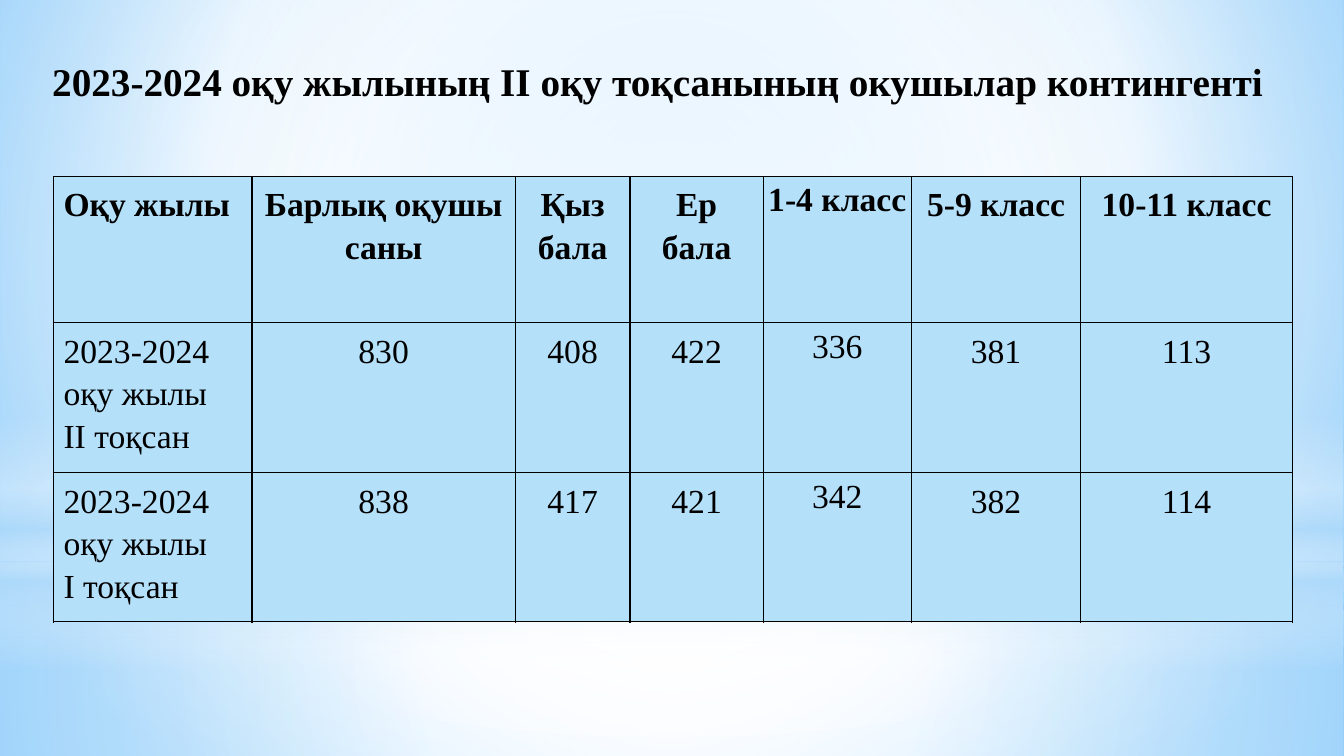
"""Builds the slide with the pupil numbers of two school terms."""
from lxml import etree
from pptx import Presentation, util as u
from pptx.dml.color import RGBColor
from pptx.enum import shapes, text
from pptx.oxml.ns import qn

BLACK = RGBColor(0, 0, 0)
CELL_BLUE = RGBColor(0xB4, 0xE0, 0xFA)
FONT = "Times New Roman"
WIDTH, HEIGHT = 13.33, 7.5


def set_gradient(holder, stops, focus=None):
    """Fill with (position, colour, opacity) stops, around focus or downwards."""
    gradient = next(holder.iter(qn("a:gradFill")))
    for child in list(gradient):
        gradient.remove(child)
    stop_list = etree.SubElement(gradient, qn("a:gsLst"))
    for position, colour, opacity in stops:
        stop = etree.SubElement(stop_list, qn("a:gs"), pos=str(position * 1000))
        rgb = etree.SubElement(stop, qn("a:srgbClr"), val=colour)
        if opacity < 100:
            etree.SubElement(rgb, qn("a:alpha"), val=str(opacity * 1000))
    if focus:
        circle = etree.SubElement(gradient, qn("a:path"), path="circle")
        edges = {side: str(share * 1000) for side, share in zip("ltrb", focus)}
        etree.SubElement(circle, qn("a:fillToRect"), edges)
    else:
        etree.SubElement(gradient, qn("a:lin"), ang="5400000", scaled="0")


def set_borders(cell):
    """Draw a thin black line on all four sides of a cell."""
    properties = cell._tc.get_or_add_tcPr()
    for place, side in enumerate(("a:lnL", "a:lnR", "a:lnT", "a:lnB")):
        line = etree.Element(qn(side), w="12700")
        fill = etree.SubElement(line, qn("a:solidFill"))
        etree.SubElement(fill, qn("a:srgbClr"), val=str(BLACK))
        properties.insert(place, line)


deck = Presentation()
deck.slide_width, deck.slide_height = u.Inches(WIDTH), u.Inches(HEIGHT)
slide = deck.slides.add_slide(deck.slide_layouts[5])

slide.background.fill.gradient()
set_gradient(slide._element.cSld.bg,
             [(0, "9ED5FF", 100), (60, "FFFFFF", 100), (100, "5BB9FF", 100)],
             (20, 10, 20, 60))

CENTRE = (50, 50, 50, 50)
RECT, OVAL = shapes.MSO_SHAPE.RECTANGLE, shapes.MSO_SHAPE.OVAL
glows = [
    (RECT, 5.58, 1.92, CENTRE,
     [(0, "FFFFFF", 91), (37, "FFFFFF", 76), (100, "B4DCFA", 79)]),
    (RECT, 0, 5.58, CENTRE,
     [(0, "FFFFFF", 89), (48, "FFFFFF", 62), (100, "B4DCFA", 79)]),
    (RECT, 4.12, 2.5, None,
     [(0, "FFFFFF", 0), (29, "FFFFFF", 30), (45, "B4DCFA", 40),
      (55, "FFFFFF", 26), (65, "B4DCFA", 60), (100, "FFFFFF", 0)]),
    (OVAL, 1.75, 5.58, CENTRE, [(0, "FFFFFF", 100), (56, "FFFFFF", 0)]),
]
for outline, top, height, focus, stops in glows:
    glow = slide.shapes.add_shape(outline, 0, u.Inches(top), deck.slide_width, u.Inches(height))
    glow.shadow.inherit = False
    glow.line.fill.background()
    glow.fill.gradient()
    set_gradient(glow._element.spPr, stops, focus)

title = slide.shapes.title
slide.shapes._spTree.append(title._element)
title.left, title.top = u.Inches(0.4), u.Inches(0.38)
title.width, title.height = u.Inches(12.24), u.Inches(0.84)
title.text_frame.text = "2023-2024 оқу жылының ІІ оқу тоқсанының окушылар контингенті"
title.text_frame.vertical_anchor = text.MSO_ANCHOR.MIDDLE
heading = title.text_frame.paragraphs[0]
heading.alignment = text.PP_ALIGN.CENTER
heading.font.name, heading.font.size = FONT, u.Pt(28)
heading.font.bold, heading.font.color.rgb = True, BLACK

records = [
    ("Оқу жылы", "Барлық оқушы саны", "Қыз бала", "Ер бала",
     "1-4 класс", "5-9 класс", "10-11 класс"),
    ("2023-2024 оқу жылы\nІІ тоқсан", 830, 408, 422, 336, 381, 113),
    ("2023-2024 оқу жылы\nІ тоқсан", 838, 417, 421, 342, 382, 114),
]
column_widths = [1.97, 2.61, 1.14, 1.32, 1.47, 1.68, 2.1]
row_heights = [1.45, 1.49, 1.48]
TIGHT_COLUMN = 4

pupils = slide.shapes.add_table(
    len(records), len(column_widths), u.Inches(0.53), u.Inches(1.75),
    u.Inches(sum(column_widths)), u.Inches(sum(row_heights))).table
for column, width in zip(pupils.columns, column_widths):
    column.width = u.Inches(width)
for row, height in zip(pupils.rows, row_heights):
    row.height = u.Inches(height)

for r, record in enumerate(records):
    for c, value in enumerate(record):
        cell = pupils.cell(r, c)
        cell.text = str(value)
        cell.fill.solid()
        cell.fill.fore_color.rgb = CELL_BLUE
        set_borders(cell)
        if c == TIGHT_COLUMN:
            cell.margin_left = cell.margin_right = cell.margin_top = cell.margin_bottom = 0
        for paragraph in cell.text_frame.paragraphs:
            paragraph.alignment = text.PP_ALIGN.CENTER if c else text.PP_ALIGN.LEFT
            paragraph.line_spacing = 1.15
            paragraph.font.name, paragraph.font.size = FONT, u.Pt(24)
            paragraph.font.bold, paragraph.font.color.rgb = r == 0, BLACK

deck.save("out.pptx")
